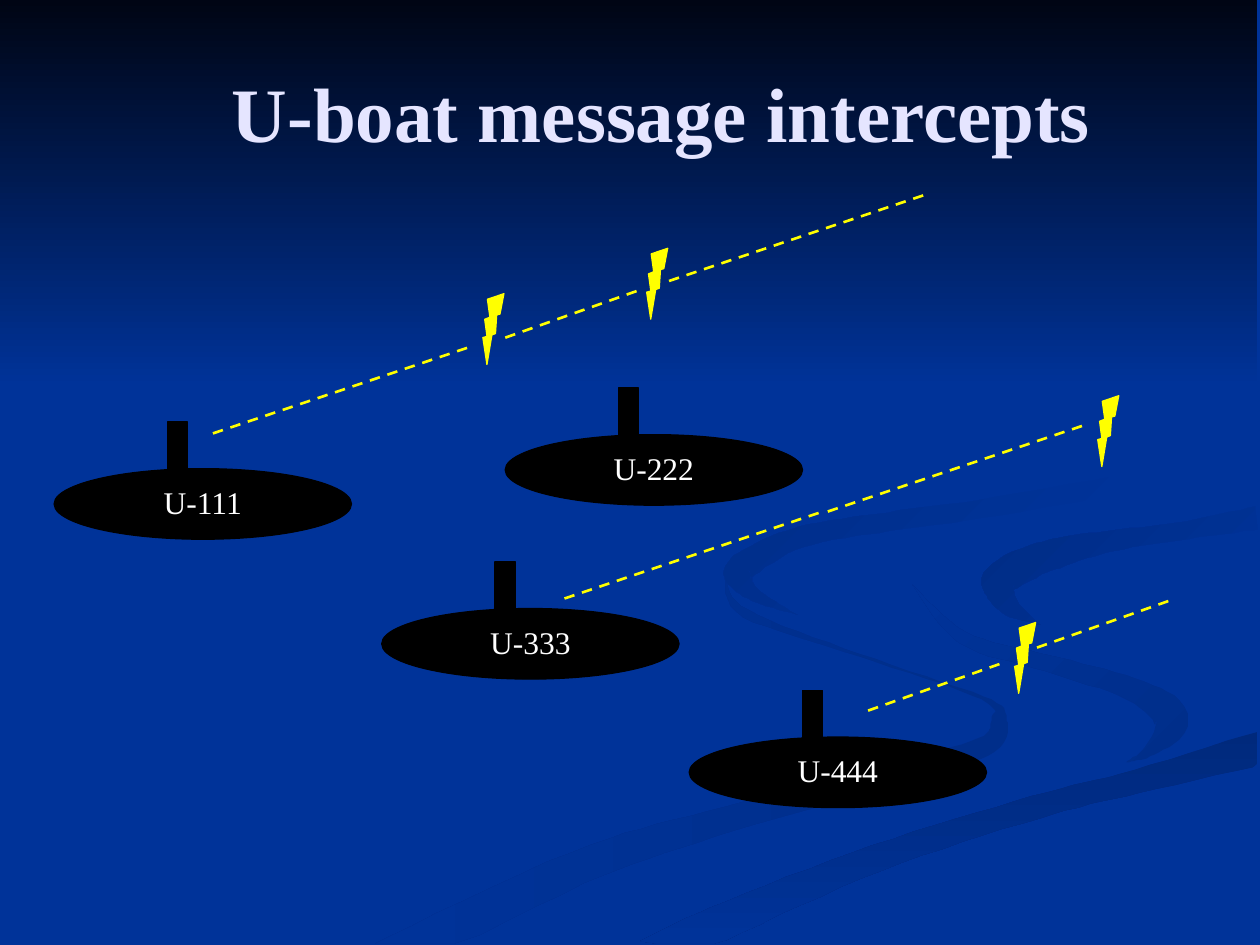
import math
import lxml.etree
import pptx
import pptx.dml.color
import pptx.enum.dml
import pptx.enum.shapes
import pptx.enum.text
import pptx.oxml.ns
import pptx.util

SEA, NIGHT, BLACK, YELLOW, PALE, WHITE = (
    "003399", "000514", "000000", "FFFF00", "E5E5FF", "FFFFFF")
SHAPE = pptx.enum.shapes.MSO_SHAPE
COLUMNS, ROWS = 1000, 750
EDGE_X, EDGE_Y = 998, 749

HULL_WIDTH, HULL_HEIGHT = 236, 56
TOWER_WIDTH, TOWER_HEIGHT = 16, 52
TOWER_SHIFT, TOWER_RISE = 90, 37
BOLT_WIDTH, BOLT_HEIGHT, BOLT_TILT = 24, 56, 28.1

# Each ribbon: (x, y, thickness) knots along its middle, two colours, angle, fade.
RIBBONS = {
    "stream": ([(575, 459, 0), (592, 487, 6), (682, 520, 2), (780, 554, 3),
                (793, 572, 13), (780, 593, 16), (700, 617, 17), (564, 654, 21),
                (458, 689, 27), (305, 763, 32)], "002E8A", SEA, 180, 0),
    "curl": ([(724, 464, 0), (764, 506, 10), (830, 526, 13), (898, 547, 18),
              (930, 571, 27), (913, 595, 10), (894, 605, 0)], "002E8A", SEA, 225, 0),
    "bank": ([(515, 761, 31), (571, 733, 28), (696, 681, 21), (821, 641, 18),
              (903, 620, 19), (1010, 591, 27)], "00297C", SEA, 90, 0),
    "inlet": ([(998, 411, 18), (934, 422, 14), (878, 430, 17), (832, 441, 24),
               (797, 457, 27), (793, 467, 24), (803, 483, 14), (826, 496, 0)],
              SEA, "002C85", 225, 0),
    "bend": ([(810, 233, 0), (956, 303, 4), (973, 335, 4), (965, 350, 9),
              (920, 377, 14), (778, 404, 15), (706, 414, 15), (636, 426, 16),
              (589, 450, 22), (589, 462, 17), (602, 474, 9), (633, 488, 0)],
             SEA, "002B81", 225, 0.25),
}
BOATS = {"U-111": (43, 372), "U-333": (303, 483), "U-222": (401, 345), "U-444": (547, 585)}
LONG, SHORT = (205, -69), (110, -39)
BEAMS = [
    ((169, 344), LONG), ((401, 268), SHORT), ((531, 223), LONG),
    ((448, 475), LONG), ((657, 406), LONG),
    ((689, 564), SHORT), ((823, 514), SHORT)]
BOLTS = [(377, 231), (507, 195), (865, 312), (799, 492)]


def smooth(knots, steps=8):
    padded = [knots[0], *knots, knots[-1]]
    curve = []
    for a, b, c, d in zip(padded, padded[1:], padded[2:], padded[3:]):
        for step in range(steps):
            t = step / steps
            curve.append([
                q + t / 2 * (r - p + t * (2 * p - 5 * q + 4 * r - s + t * (3 * (q - r) + s - p)))
                for p, q, r, s in zip(a, b, c, d)])
    return curve + [list(knots[-1])]


def sweep(knots):
    middle = smooth(knots)
    left, right = [], []
    for before, (x, y, thickness), after in zip(
            middle[:1] + middle, middle, middle[1:] + middle[-1:]):
        heading = math.atan2(after[1] - before[1], after[0] - before[0])
        across = -math.sin(heading) * thickness / 2, math.cos(heading) * thickness / 2
        for bank, side in ((left, 1), (right, -1)):
            bank.append((min(x + side * across[0], EDGE_X), min(y + side * across[1], EDGE_Y)))
    return left + right[::-1]


def paint(color_format, value):
    color_format.rgb = pptx.dml.color.RGBColor.from_string(value)


def write(frame, text, size=18, color=WHITE, bold=False, before=0):
    frame.word_wrap = True
    frame.vertical_anchor = pptx.enum.text.MSO_ANCHOR.MIDDLE
    paragraph = frame.paragraphs[0]
    paragraph.alignment = pptx.enum.text.PP_ALIGN.CENTER
    paragraph.line_spacing = 0.93
    paragraph.space_before = pptx.util.Pt(before)
    run = paragraph.add_run()
    run.text = text
    run.font.name = "Times New Roman"
    run.font.size = pptx.util.Pt(size)
    run.font.bold = bold
    paint(run.font.color, color)


class Deck:
    def __init__(self):
        self.file = pptx.Presentation()
        self.file.slide_width = pptx.util.Inches(10)
        self.file.slide_height = pptx.util.Inches(7.5)
        self.cell = self.file.slide_width // COLUMNS
        self.slide = self.file.slides.add_slide(self.file.slide_layouts[5])
        self.shapes = self.slide.shapes
        water = self.slide.background.fill
        water.solid()
        paint(water.fore_color, SEA)

    def grid(self, *cells):
        return [pptx.util.Emu(round(c * self.cell)) for c in cells]

    def blend(self, area, start, end, angle, fade=0):
        area.shadow.inherit = False
        area.line.fill.background()
        area.fill.gradient()
        area.fill.gradient_angle = (360 - angle) % 360
        for stop, color, position in zip(area.fill.gradient_stops, (start, end), (fade, 1)):
            paint(stop.color, color)
            stop.position = position

    def ribbon(self, group, knots, *colors):
        outline = sweep(knots)
        pen = group.shapes.build_freeform(*outline[0], scale=self.cell)
        pen.add_line_segments(outline[1:], close=True)
        self.blend(pen.convert_to_shape(), *colors)

    def sky(self, group, height):
        box = self.grid(0, 0, EDGE_X, height)
        self.blend(group.shapes.add_shape(SHAPE.RECTANGLE, *box), NIGHT, SEA, 90)

    def title(self, text, box):
        heading = self.shapes.title
        heading.left, heading.top, heading.width, heading.height = self.grid(*box)
        write(heading.text_frame, text, size=44, color=PALE, bold=True)
        self.shapes._spTree.append(heading._element)

    def solid(self, shapes, preset, box, color):
        figure = shapes.add_shape(preset, *self.grid(*box))
        figure.shadow.inherit = False
        figure.fill.solid()
        paint(figure.fill.fore_color, color)
        paint(figure.line.color, color)
        figure.line.width = pptx.util.Pt(0.75)
        return figure

    def boat(self, name, x, y):
        parts = self.shapes.add_group_shape().shapes
        hull = self.solid(parts, SHAPE.OVAL, (x, y, HULL_WIDTH, HULL_HEIGHT), BLACK)
        write(hull.text_frame, name, before=11.2)
        tower = (x + TOWER_SHIFT, y - TOWER_RISE, TOWER_WIDTH, TOWER_HEIGHT)
        self.solid(parts, SHAPE.RECTANGLE, tower, BLACK)

    def beam(self, start, reach):
        end = [begin + length for begin, length in zip(start, reach)]
        signal = self.shapes.add_connector(
            pptx.enum.shapes.MSO_CONNECTOR.STRAIGHT, *self.grid(*start, *end))
        paint(signal.line.color, YELLOW)
        signal.line.width = pptx.util.Pt(1.5)
        signal.line.dash_style = pptx.enum.dml.MSO_LINE.DASH
        lxml.etree.SubElement(signal._element.spPr, pptx.oxml.ns.qn("a:effectLst"))

    def bolt(self, x, y):
        box = (x, y, BOLT_WIDTH, BOLT_HEIGHT)
        self.solid(self.shapes, SHAPE.LIGHTNING_BOLT, box, YELLOW).rotation = BOLT_TILT


def main():
    deck = Deck()
    seascape = deck.shapes.add_group_shape()
    for ribbon in RIBBONS.values():
        deck.ribbon(seascape, *ribbon)
    deck.sky(seascape, 307)
    deck.title("U-boat message intercepts", (50, 30, 950, 125))
    for name, place in BOATS.items():
        deck.boat(name, *place)
    for start, reach in BEAMS:
        deck.beam(start, reach)
    for place in BOLTS:
        deck.bolt(*place)
    deck.file.save("out.pptx")


if __name__ == "__main__":
    main()
